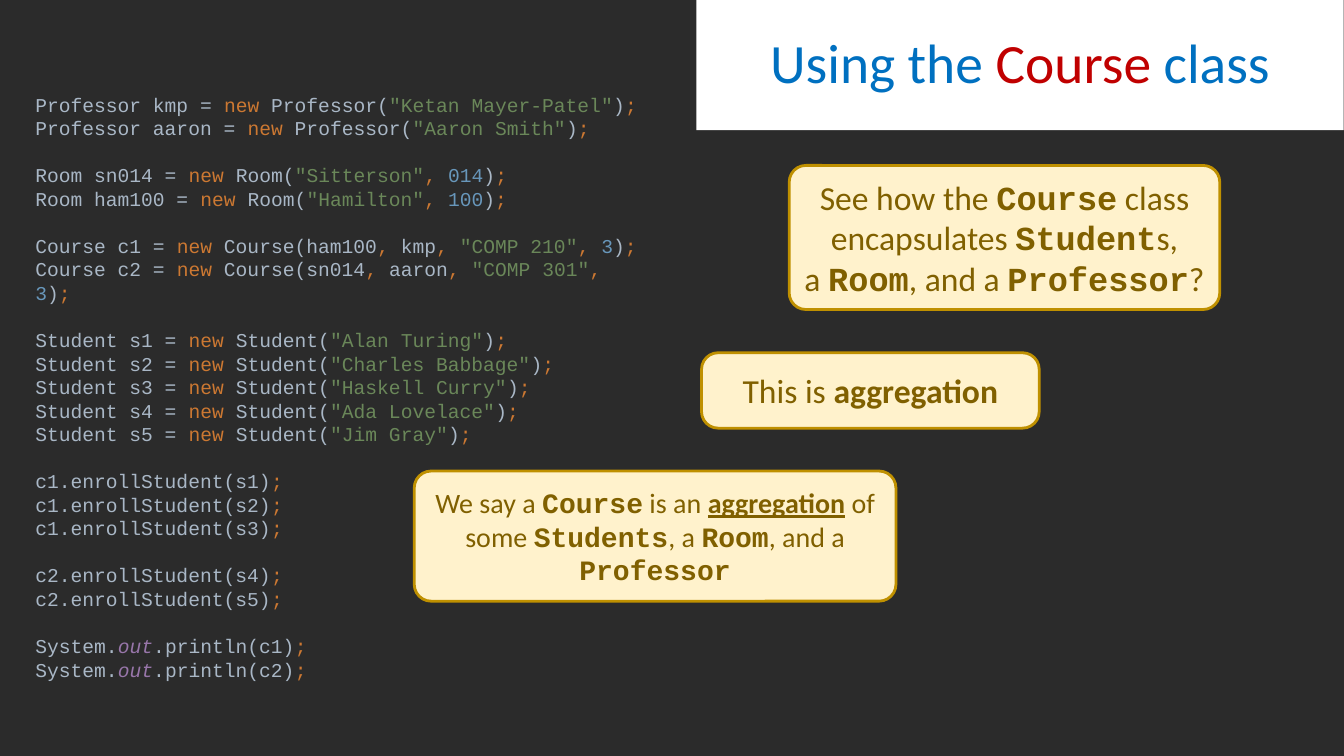
from itertools import groupby

from pptx import Presentation
from pptx.dml.color import RGBColor
from pptx.enum.shapes import MSO_SHAPE as Preset
from pptx.enum.text import MSO_ANCHOR as Anchor, PP_ALIGN as Align
from pptx.util import Cm, Pt

COLOURS = {
    "background": "2B2B2B",
    "title_fill": "FFFFFF",
    "title": "0070C0",
    "title_class": "C00000",
    "plain": "A9B7C6",
    "keyword": "CC7832",
    "string": "6A8759",
    "number": "6897BB",
    "field": "9876AA",
    "callout_fill": "FFF2CC",
    "callout_line": "BF9000",
    "callout_text": "806000",
}
TEXT_FONT = "Calibri"
CODE_FONT = "Courier New"
CODE_PITCH = 16.8

TITLE = [("Using the ", "title"), ("Course", "title_class"), (" class", "title")]
TITLE_AREA = (17.55, 0, 16.31, 3.28)
CODE_AREA = (0.64, 2.21, 15.93, 14.63)

CODE = [
    [
        'Professor kmp = new Professor("Ketan Mayer-Patel");',
        'Professor aaron = new Professor("Aaron Smith");',
    ],
    [
        'Room sn014 = new Room("Sitterson", 014);',
        'Room ham100 = new Room("Hamilton", 100);',
    ],
    [
        'Course c1 = new Course(ham100, kmp, "COMP 210", 3);',
        'Course c2 = new Course(sn014, aaron, "COMP 301", 3);',
    ],
    [
        'Student s1 = new Student("Alan Turing");',
        'Student s2 = new Student("Charles Babbage");',
        'Student s3 = new Student("Haskell Curry");',
        'Student s4 = new Student("Ada Lovelace");',
        'Student s5 = new Student("Jim Gray");',
    ],
    ["c1.enrollStudent(s1);", "c1.enrollStudent(s2);", "c1.enrollStudent(s3);"],
    ["c2.enrollStudent(s4);", "c2.enrollStudent(s5);"],
    ["System.out.println(c1);", "System.out.println(c2);"],
]

CALLOUTS = [
    {
        "area": (19.89, 4.17, 10.85, 3.63),
        "size": 24,
        "paragraphs": [
            [("See how the ", "text"), ("Course", "code"),
             (" class encapsulates ", "text"), ("Student", "code"), ("s,", "text")],
            [("a ", "text"), ("Room", "code"), (", and a ", "text"),
             ("Professor", "code"), ("?", "text")],
        ],
    },
    {
        "area": (17.68, 8.89, 8.51, 1.9),
        "size": 24,
        "paragraphs": [[("This is ", "text"), ("aggregation", "bold")]],
    },
    {
        "area": (10.44, 11.87, 12.14, 3.28),
        "size": 20,
        "paragraphs": [
            [("We say a ", "text"), ("Course", "code"), (" is an ", "text"),
             ("aggregation", "underlined"), (" of some ", "text"),
             ("Students", "code"), (", a ", "text"), ("Room", "code"),
             (", and a ", "text"), ("Professor", "code")],
        ],
    },
]
CORNER_RADIUS = 0.42


def colour(name):
    return RGBColor.from_string(COLOURS[name])


def place(area):
    return [Cm(length) for length in area]


def add_panel(page, preset, area, fill):
    panel = page.shapes.add_shape(preset, *place(area))
    panel.shadow.inherit = False
    panel.fill.solid()
    panel.fill.fore_color.rgb = colour(fill)
    panel.line.fill.background()
    panel.text_frame.word_wrap = True
    panel.text_frame.vertical_anchor = Anchor.MIDDLE
    return panel


def add_span(para, text):
    span = para.add_run()
    span.text = text
    return span


def next_paragraph(frame, index):
    return frame.add_paragraph() if index else frame.paragraphs[0]


def character_kind(character):
    if character.isalnum():
        return "word"
    return "keyword" if character in ",;" else "plain"


def token_colour(token, kind):
    if kind != "word":
        return kind
    if token.isdigit():
        return "number"
    return {"new": "keyword", "out": "field"}.get(token, "plain")


def tokens(line):
    for index, piece in enumerate(line.split('"')):
        if index % 2:
            yield f'"{piece}"', "string"
            continue
        for kind, characters in groupby(piece, character_kind):
            token = "".join(characters)
            yield token, token_colour(token, kind)


def add_title(page):
    panel = add_panel(page, Preset.RECTANGLE, TITLE_AREA, "title_fill")
    para = panel.text_frame.paragraphs[0]
    para.alignment = Align.CENTER
    para.line_spacing = 0.9
    para.font.name = TEXT_FONT
    para.font.size = Pt(39.6)
    for text, name in TITLE:
        add_span(para, text).font.color.rgb = colour(name)


def add_code(page):
    frame = page.shapes.add_textbox(*place(CODE_AREA)).text_frame
    frame.word_wrap = True
    for block_index, block in enumerate(CODE):
        para = next_paragraph(frame, block_index)
        para.font.name = CODE_FONT
        para.font.size = Pt(14)
        para.line_spacing = Pt(CODE_PITCH)
        para.space_before = Pt(CODE_PITCH if block_index else 0)
        for line_index, line in enumerate(block):
            if line_index:
                para.add_line_break()
            for name, group in groupby(tokens(line), lambda token: token[1]):
                span = add_span(para, "".join(text for text, _ in group))
                span.font.color.rgb = colour(name)
                if name == "field":
                    span.font.italic = True


def add_callout(page, callout):
    area = callout["area"]
    panel = add_panel(page, Preset.ROUNDED_RECTANGLE, area, "callout_fill")
    panel.adjustments[0] = CORNER_RADIUS / min(area[2:])
    if callout["size"] == 20:
        panel.adjustments[0] = 0.13
    panel.line.color.rgb = colour("callout_line")
    panel.line.width = Pt(2)
    for index, spans in enumerate(callout["paragraphs"]):
        para = next_paragraph(panel.text_frame, index)
        para.alignment = Align.CENTER
        para.font.size = Pt(callout["size"])
        para.font.color.rgb = colour("callout_text")
        for text, style in spans:
            font = add_span(para, text).font
            font.name = CODE_FONT if style == "code" else TEXT_FONT
            font.bold = style != "text"
            font.underline = style == "underlined"


def main():
    deck = Presentation()
    deck.slide_width, deck.slide_height = Cm(33.87), Cm(19.05)
    page = deck.slides.add_slide(deck.slide_layouts[6])
    page.background.fill.solid()
    page.background.fill.fore_color.rgb = colour("background")
    add_title(page)
    add_code(page)
    for callout in CALLOUTS:
        add_callout(page, callout)
    deck.save("out.pptx")


if __name__ == "__main__":
    main()
